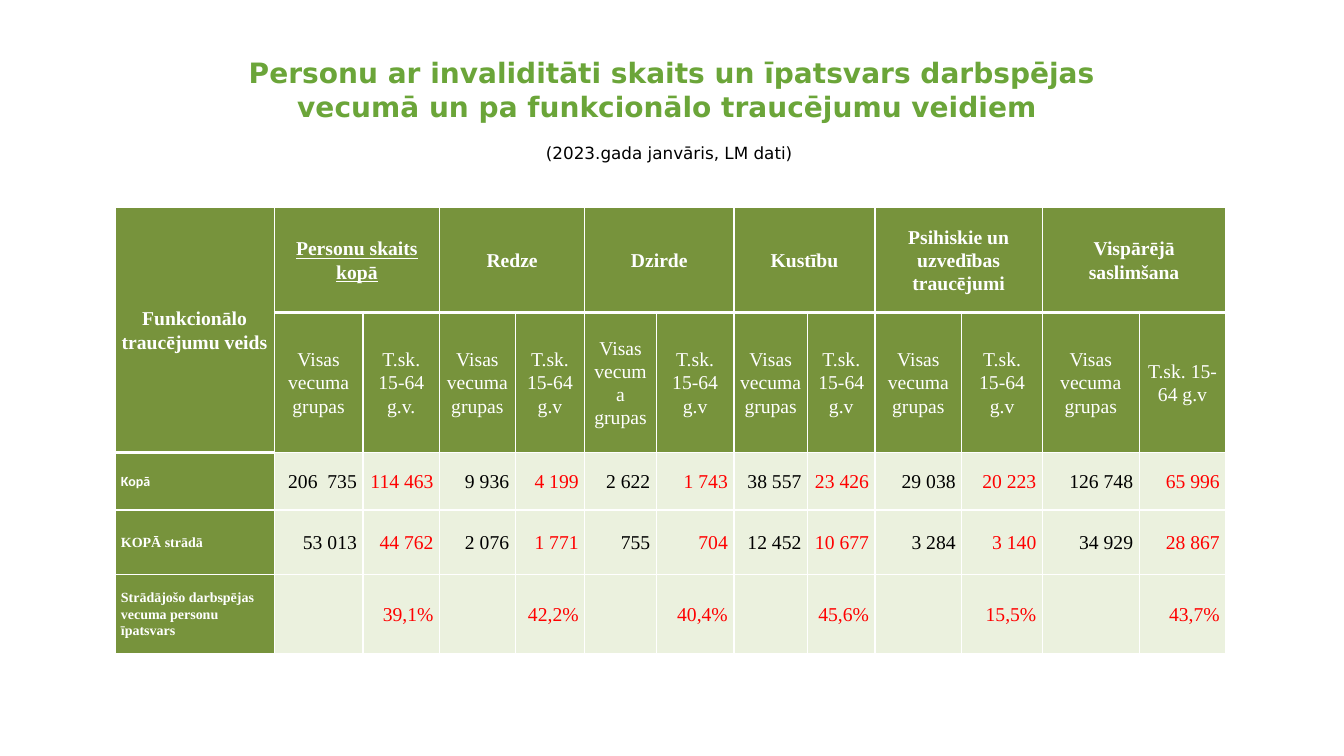
from lxml.etree import SubElement as Sub
from pptx import Presentation
from pptx.dml.color import RGBColor
from pptx.enum.text import MSO_ANCHOR as Anchor, MSO_AUTO_SIZE as Fit, PP_ALIGN as Align
from pptx.oxml.ns import qn
from pptx.util import Inches, Pt

LEAF = RGBColor(0x6B, 0xA5, 0x39)
OLIVE = RGBColor(0x77, 0x93, 0x3C)
PALE = RGBColor(0xEB, 0xF1, 0xDE)
WHITE = RGBColor(0xFF, 0xFF, 0xFF)
BLACK = RGBColor(0, 0, 0)
RED = RGBColor(0xFF, 0, 0)

# Text formats
SERIF = {"name": "Times New Roman", "size": Pt(14), "bold": False}
HEAD = {**SERIF, "bold": True, "color": WHITE}
SUB = {**SERIF, "color": WHITE}
SIDE = {**HEAD, "size": Pt(10)}
ALL = {**SERIF, "color": BLACK}
WORK = {**SERIF, "color": RED}
TITLE = {"name": "DejaVu Sans", "size": Pt(20), "bold": True, "color": LEAF}
NOTE = {**TITLE, "size": Pt(12), "bold": False, "color": BLACK}

# Table content
COLS = [1.58, 0.88, 0.76, 0.75, 0.69, 0.71, 0.77, 0.73, 0.67, 0.86, 0.8, 0.96, 0.86]
ROWS = [1.04, 1.39, 0.57, 0.64, 0.79]
GROUPS = ["Personu skaits kopā", "Redze", "Dzirde", "Kustību",
          "Psihiskie un uzvedības traucējumi", "Vispārējā saslimšana"]
DATA = [
    ("Kopā", ["206  735", "114 463", "9 936", "4 199", "2 622", "1 743",
              "38 557", "23 426", "29 038", "20 223", "126 748", "65 996"]),
    ("KOPĀ strādā", ["53 013", "44 762", "2 076", "1 771", "755", "704",
                     "12 452", "10 677", "3 284", "3 140", "34 929", "28 867"]),
    ("Strādājošo darbspējas vecuma personu īpatsvars",
     ["", "39,1%", "", "42,2%", "", "40,4%", "", "45,6%", "", "15,5%", "", "43,7%"]),
]


class Deck:
    def __init__(self):
        self.file = Presentation()
        self.file.slide_width = Inches(13.33)
        self.file.slide_height = Inches(7.5)
        self.slide = self.file.slides.add_slide(self.file.slide_layouts[5])

    def label(self, para, text, style, align):
        para.alignment = align
        run = para.add_run()
        run.text = text
        for key, value in style.items():
            if key == "color":
                run.font.color.rgb = value
            else:
                setattr(run.font, key, value)

    def title(self, text, note, box):
        shape = self.slide.shapes.title
        for key, value in zip(("left", "top", "width", "height"), box):
            setattr(shape, key, Inches(value))
        frame = shape.text_frame
        frame.auto_size = Fit.NONE
        frame.vertical_anchor = Anchor.TOP
        self.label(frame.paragraphs[0], text, TITLE, Align.CENTER)
        para = frame.add_paragraph()
        para.space_before = Pt(14)
        self.label(para, note, NOTE, Align.CENTER)

    def table(self, left, top):
        frame = self.slide.shapes.add_table(
            len(ROWS), len(COLS), Inches(left), Inches(top),
            Inches(sum(COLS)), Inches(sum(ROWS)))
        grid = frame.table
        grid.first_row = grid.horz_banding = False
        for col, width in zip(grid.columns, COLS):
            col.width = Inches(width)
        for row, height in zip(grid.rows, ROWS):
            row.height = Inches(height)
        return grid

    def cell(self, cell, text, style, align=Align.CENTER):
        cell.vertical_anchor = Anchor.MIDDLE
        cell.margin_left = cell.margin_right = Inches(0.06)
        cell.margin_top = cell.margin_bottom = 0
        if text:
            para = cell.text_frame.paragraphs[0]
            para.line_spacing = 1.07
            self.label(para, text, style, align)

    def paint(self, cell, color, base):
        cell.fill.solid()
        cell.fill.fore_color.rgb = color
        props = cell._tc.get_or_add_tcPr()
        for i, side in enumerate("LRTB"):
            width = base if side == "B" else 1
            line = Sub(props, qn(f"a:ln{side}"), w=str(Pt(width)))
            fill = Sub(line, qn("a:solidFill"))
            Sub(fill, qn("a:srgbClr"), val=str(WHITE))
            props.insert(i, line)


def main():
    deck = Deck()
    deck.title("Personu ar invaliditāti skaits un īpatsvars darbspējas vecumā "
               "un pa funkcionālo traucējumu veidiem ",
               "(2023.gada janvāris, LM dati) ", (2.23, 0.5, 8.87, 1.29))
    grid = deck.table(1.14, 2.06)

    # Fills and borders, with a thick rule under the headings
    for r in range(len(ROWS)):
        for c in range(len(COLS)):
            color = OLIVE if r < 2 or c == 0 else PALE
            thick = r == 0 or (r == 1 and c == 0)
            deck.paint(grid.cell(r, c), color, 3 if thick else 1)

    # Headings
    grid.cell(0, 0).merge(grid.cell(1, 0))
    deck.cell(grid.cell(0, 0), "Funkcionālo traucējumu veids", HEAD)
    for i, name in enumerate(GROUPS):
        c = 2 * i + 1
        grid.cell(0, c).merge(grid.cell(0, c + 1))
        deck.cell(grid.cell(0, c), name, {**HEAD, "underline": i == 0})
        deck.cell(grid.cell(1, c), "Visas vecuma grupas", SUB)
        deck.cell(grid.cell(1, c + 1), "T.sk. 15-64 g.v" + ("." if i == 0 else ""), SUB)

    # Figures
    for r, (name, values) in enumerate(DATA, 2):
        style = {**SIDE, "name": "Calibri"} if r == 2 else SIDE
        deck.cell(grid.cell(r, 0), name, style, Align.LEFT)
        for c, value in enumerate(values, 1):
            deck.cell(grid.cell(r, c), value, ALL if c % 2 else WORK, Align.RIGHT)

    deck.file.save("out.pptx")


if __name__ == "__main__":
    main()
